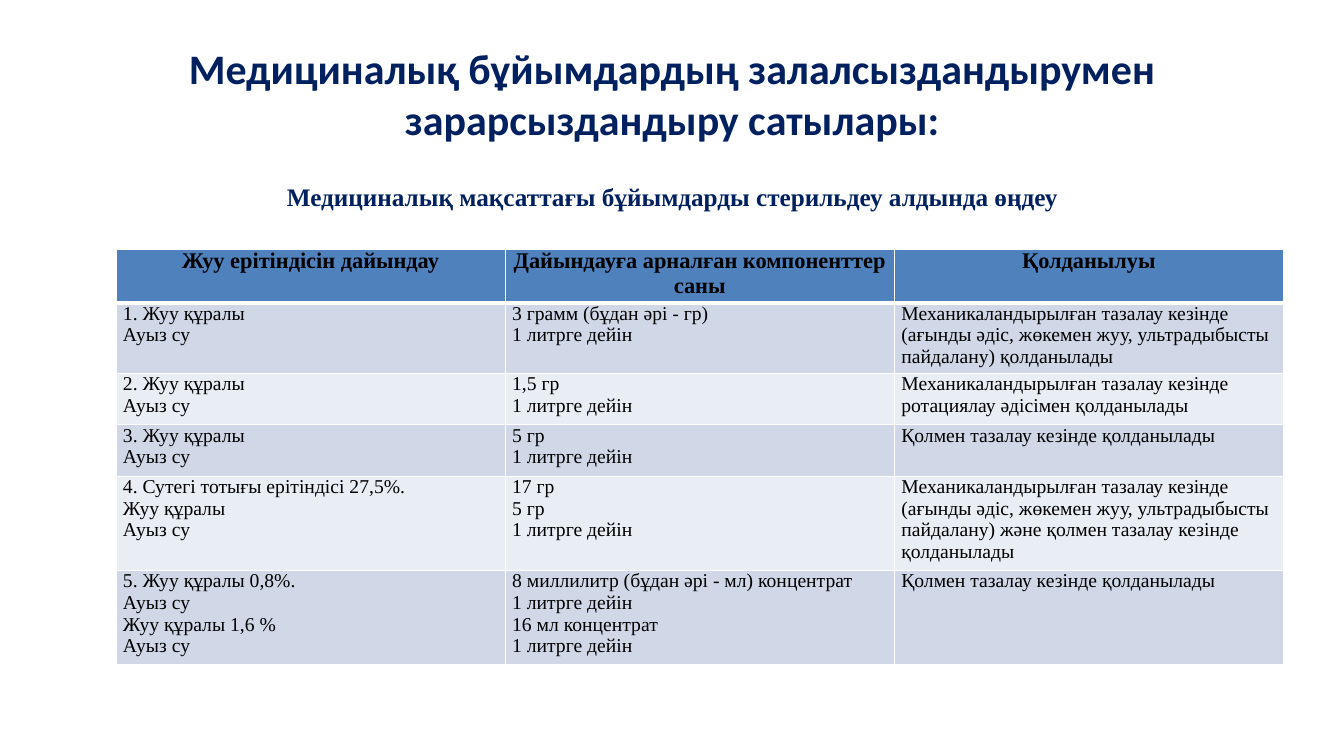
from lxml import etree
from pptx import Presentation
from pptx.dml.color import RGBColor
from pptx.enum.text import MSO_ANCHOR as Anchor, PP_ALIGN as Align
from pptx.oxml.ns import qn
from pptx.util import Inches, Pt

TITLE = "Медициналық бұйымдардың залалсыздандырумен зарарсыздандыру сатылары:"
SUBTITLE = "Медициналық мақсаттағы бұйымдарды стерильдеу алдында өңдеу"
HEADER = ("Жуу ерітіндісін дайындау", "Дайындауға арналған компоненттер саны", "Қолданылуы")
SOLUTIONS = [
    ("1. Жуу құралы\nАуыз су",
     "3 грамм (бұдан әрі - гр)\n1 литрге дейін",
     "Механикаландырылған тазалау кезінде (ағынды әдіс, жөкемен жуу, ультрадыбысты пайдалану) қолданылады"),
    ("2. Жуу құралы\nАуыз су",
     "1,5 гр\n1 литрге дейін",
     "Механикаландырылған тазалау кезінде ротациялау әдісімен қолданылады"),
    ("3. Жуу құралы\nАуыз су",
     "5 гр\n1 литрге дейін",
     "Қолмен тазалау кезінде қолданылады"),
    ("4. Сутегі тотығы ерітіндісі 27,5%.\nЖуу құралы\nАуыз су",
     "17 гр\n5 гр\n1 литрге дейін",
     "Механикаландырылған тазалау кезінде (ағынды әдіс, жөкемен жуу, ультрадыбысты пайдалану) "
     "және қолмен тазалау кезінде қолданылады"),
    ("5. Жуу құралы 0,8%.\nАуыз су\nЖуу құралы 1,6 %\nАуыз су",
     "8 миллилитр (бұдан әрі - мл) концентрат\n1 литрге дейін\n16 мл концентрат\n1 литрге дейін",
     "Қолмен тазалау кезінде қолданылады"),
]

NAVY, BLACK, WHITE = "002060", "000000", "FFFFFF"
HEADER_FILL, BANDS = "4F81BD", ("D0D8E8", "E9EDF4")
SERIF = "Times New Roman"
TITLE_FONT = {"name": "Calibri", "size": Pt(30), "bold": True}
SUBTITLE_FONT = {"name": SERIF, "size": Pt(18), "bold": True}
HEADER_FONT = {"name": SERIF, "size": Pt(16), "bold": True}
BODY_FONT = {"name": SERIF, "size": Pt(14), "bold": False}
CELL_FORMAT = {"margin_left": Inches(0.07), "margin_right": Inches(0.07),
               "margin_top": 0, "margin_bottom": 0, "vertical_anchor": Anchor.TOP}
COLUMN_WIDTH, ROW_HEIGHT = 3.86, 0.51


def rgb(color):
    return RGBColor.from_string(color)


def apply(target, values):
    for key, value in values.items():
        setattr(target, key, value)


def write(frame, words, font, color, align):
    """Fill a text frame, one paragraph per line of words."""
    frame.text = words
    for paragraph in frame.paragraphs:
        paragraph.alignment = align
        for run in paragraph.runs:
            apply(run.font, font)
            run.font.color.rgb = rgb(color)


def add_heading(slide, words, box, font, anchor):
    frame = slide.shapes.add_textbox(*map(Inches, box)).text_frame
    apply(frame, {"word_wrap": True, "vertical_anchor": anchor})
    write(frame, words, font, NAVY, Align.CENTER)


def set_borders(cell, widths):
    """Draw white cell borders; widths are points for left, right, top, bottom."""
    properties = cell._tc.get_or_add_tcPr()
    for place, (side, width) in enumerate(zip("LRTB", widths)):
        line = etree.Element(qn(f"a:ln{side}"), w=str(Pt(width)))
        fill = etree.SubElement(line, qn("a:solidFill"))
        etree.SubElement(fill, qn("a:srgbClr"), val=WHITE)
        properties.insert(place, line)


def add_solutions_table(slide):
    rows = [HEADER, *SOLUTIONS]
    table = slide.shapes.add_table(
        len(rows), len(HEADER), Inches(1.15), Inches(2.47),
        Inches(COLUMN_WIDTH * len(HEADER)), Inches(ROW_HEIGHT * len(rows))).table
    for column in table.columns:
        column.width = Inches(COLUMN_WIDTH)
    for r, row in enumerate(rows):
        table.rows[r].height = Inches(ROW_HEIGHT)
        is_header = r == 0
        fill = HEADER_FILL if is_header else BANDS[(r - 1) % 2]
        font = HEADER_FONT if is_header else BODY_FONT
        align = Align.CENTER if is_header else Align.LEFT
        top, bottom = 3 if r == 1 else 1, 3 if is_header else 1
        for c, words in enumerate(row):
            cell = table.cell(r, c)
            apply(cell, CELL_FORMAT)
            cell.fill.solid()
            cell.fill.fore_color.rgb = rgb(fill)
            set_borders(cell, (1, 1, top, bottom))
            write(cell.text_frame, words, font, BLACK, align)


def main():
    deck = Presentation()
    apply(deck, {"slide_width": Inches(13.33), "slide_height": Inches(7.5)})
    slide = deck.slides.add_slide(deck.slide_layouts[6])
    add_heading(slide, TITLE, (0.67, 0.3, 12, 1.25), TITLE_FONT, Anchor.MIDDLE)
    add_heading(slide, SUBTITLE, (0.67, 1.75, 12, 0.45), SUBTITLE_FONT, Anchor.TOP)
    add_solutions_table(slide)
    deck.save("out.pptx")


if __name__ == "__main__":
    main()
